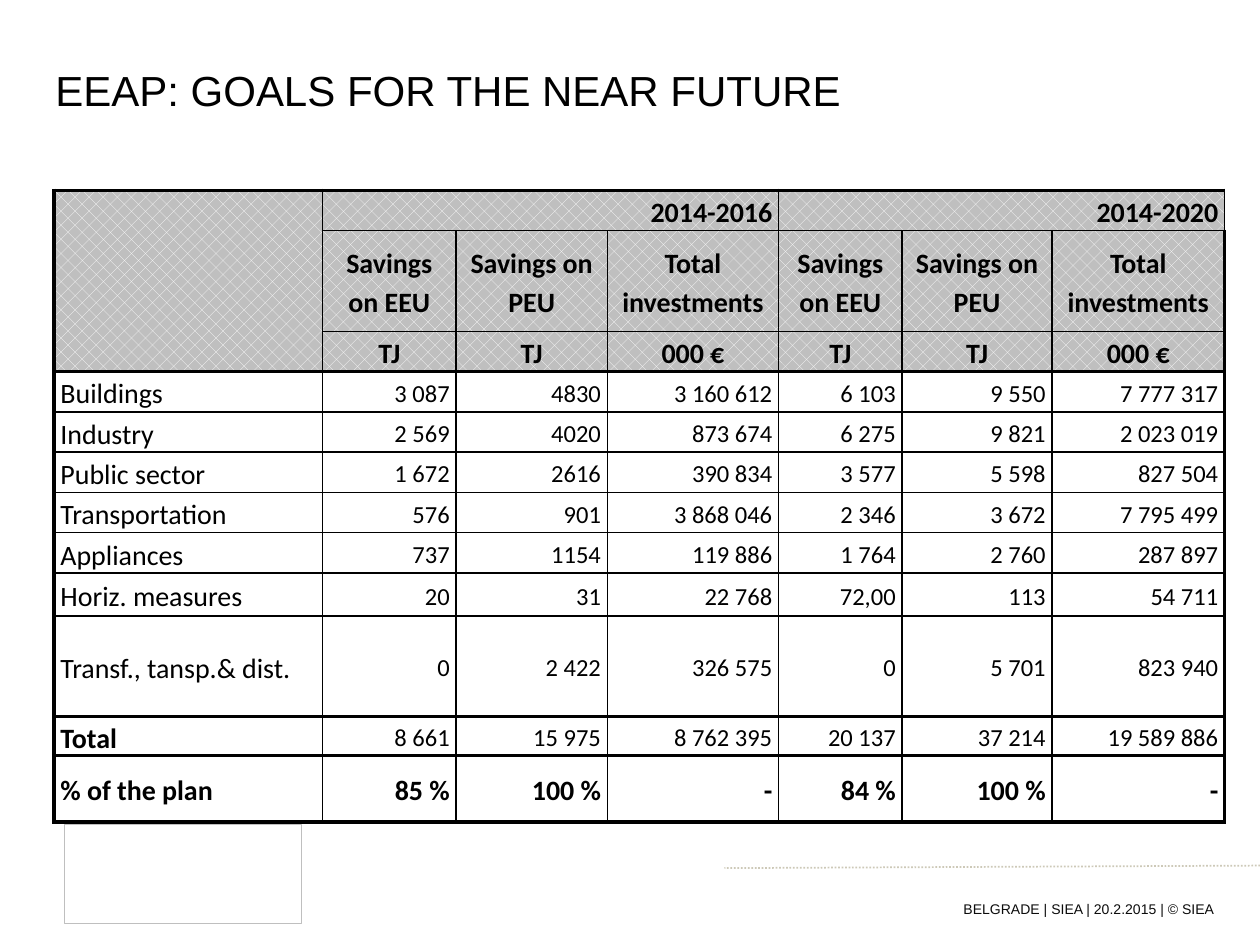
from dataclasses import dataclass

from lxml import etree
from pptx import Presentation
from pptx.dml.color import RGBColor
from pptx.enum.dml import MSO_LINE, MSO_PATTERN
from pptx.enum.shapes import MSO_CONNECTOR, MSO_SHAPE
from pptx.enum.text import MSO_ANCHOR, MSO_AUTO_SIZE, PP_ALIGN
from pptx.oxml.ns import qn
from pptx.util import Inches, Pt

LEFT, CENTER, RIGHT = PP_ALIGN.LEFT, PP_ALIGN.CENTER, PP_ALIGN.RIGHT
MIDDLE, TOP = MSO_ANCHOR.MIDDLE, MSO_ANCHOR.TOP
NO_AUTOFIT = MSO_AUTO_SIZE.NONE
STRAIGHT, RECTANGLE = MSO_CONNECTOR.STRAIGHT, MSO_SHAPE.RECTANGLE
DOTTED, HATCH = MSO_LINE.ROUND_DOT, MSO_PATTERN.PERCENT_25

# The slide is a grid of square units
GRID_COLUMNS, GRID_ROWS = 100, 75


@dataclass(frozen=True)
class Theme:
    heading_font: str = "Arial"
    table_font: str = "Calibri"
    ink: str = "000000"
    footer_ink: str = "0C0C0C"
    rule: str = "CDC9B8"
    gray: str = "BFBFBF"
    hatch: str = "FFFFFF"
    title_size: float = 24
    label_size: float = 16
    value_size: float = 14
    footer_size: float = 8
    thin: float = 1
    thick: float = 2.25
    hairline: float = 0.25
    line_spacing: float = 1.15


# Table content
PERIODS = ["2014-2016", "2014-2020"]
MEASURES = ["Savings on EEU", "Savings on PEU", "Total investments"]
UNITS = ["TJ", "TJ", "000 €"]
SECTORS = [
    ["Buildings", "3 087", "4830", "3 160 612", "6 103", "9 550", "7 777 317"],
    ["Industry", "2 569", "4020", "873 674", "6 275", "9 821", "2 023 019"],
    ["Public sector", "1 672", "2616", "390 834", "3 577", "5 598", "827 504"],
    ["Transportation", "576", "901", "3 868 046", "2 346", "3 672", "7 795 499"],
    ["Appliances", "737", "1154", "119 886", "1 764", "2 760", "287 897"],
    ["Horiz. measures", "20", "31", "22 768", "72,00", "113", "54 711"],
    ["Transf., tansp.& dist.", "0", "2 422", "326 575", "0", "5 701", "823 940"],
]
TOTAL = ["Total", "8 661", "15 975", "8 762 395", "20 137", "37 214", "19 589 886"]
PLAN_SHARE = ["% of the plan", "85 %", "100 %", "-", "84 %", "100 %", "-"]

PERIOD_ROW = [""] + [text for period in PERIODS for text in (period, "", "")]
HEADER = [PERIOD_ROW, [""] + MEASURES * 2, [""] + UNITS * 2]
GOALS = HEADER + SECTORS + [TOTAL, PLAN_SHARE]
HEADER_ROWS = len(HEADER)
PLAN_ROW = len(GOALS) - 1
TOTAL_ROW = PLAN_ROW - 1
THICK_BELOW = {HEADER_ROWS - 1, TOTAL_ROW - 1, TOTAL_ROW, PLAN_ROW}

# Table sizes in grid units
COLUMN_WIDTHS = [21.3, 10.6, 12, 13.6, 9.8, 11.9, 13.7]
ROW_HEIGHTS = [3.2, 8] + [3.2] * 6 + [3.4, 8, 2.9, 5.3]


class GoalsSlide:
    def __init__(self, presentation, theme):
        self.theme = theme
        self.unit_x = presentation.slide_width / GRID_COLUMNS
        self.unit_y = presentation.slide_height / GRID_ROWS
        self.slide = presentation.slides.add_slide(presentation.slide_layouts[5])
        self.shapes = self.slide.shapes

    def x(self, columns):
        return round(columns * self.unit_x)

    def y(self, rows):
        return round(rows * self.unit_y)

    def area(self, left, top, width, height):
        return self.x(left), self.y(top), self.x(width), self.y(height)

    def set_text(self, frame, text, font, size, color, align=LEFT, bold=False):
        frame.text = text
        paragraph = frame.paragraphs[0]
        paragraph.alignment = align
        for run in paragraph.runs:
            run.font.name = font
            run.font.size = Pt(size)
            run.font.bold = bold
            run.font.color.rgb = RGBColor.from_string(color)
        return paragraph

    def title(self, text, *area):
        heading = self.shapes.title
        heading.left, heading.top, heading.width, heading.height = self.area(*area)
        frame = heading.text_frame
        frame.auto_size = NO_AUTOFIT
        frame.vertical_anchor = MIDDLE
        self.set_text(frame, text, self.theme.heading_font, self.theme.title_size,
                      self.theme.ink)

    def footer(self, text, *area):
        frame = self.shapes.add_textbox(*self.area(*area)).text_frame
        frame.word_wrap = True
        frame.vertical_anchor = TOP
        frame.margin_left = frame.margin_right = frame.margin_top = frame.margin_bottom = 0
        self.set_text(frame, text, self.theme.heading_font, self.theme.footer_size,
                      self.theme.footer_ink, RIGHT)

    def dotted_rule(self, x1, y1, x2, y2):
        rule = self.shapes.add_connector(STRAIGHT, self.x(x1), self.y(y1), self.x(x2), self.y(y2))
        rule.line.color.rgb = RGBColor.from_string(self.theme.rule)
        rule.line.width = Pt(self.theme.thin)
        rule.line.dash_style = DOTTED
        etree.SubElement(rule._element.spPr, qn("a:effectLst"))

    def frame(self, *area):
        outline = self.shapes.add_shape(RECTANGLE, *self.area(*area))
        outline.shadow.inherit = False
        outline.fill.background()
        outline.line.color.rgb = RGBColor.from_string(self.theme.gray)
        outline.line.width = Pt(self.theme.hairline)

    def borders(self, cell, thick_sides):
        properties = cell._tc.get_or_add_tcPr()
        for side in "LRTB":
            width = self.theme.thick if side in thick_sides else self.theme.thin
            border = etree.SubElement(properties, qn(f"a:ln{side}"), w=str(Pt(width)))
            fill = etree.SubElement(border, qn("a:solidFill"))
            etree.SubElement(fill, qn("a:srgbClr"), val=self.theme.ink)

    def shade(self, cell, is_header):
        if not is_header:
            cell.fill.background()
            return
        cell.fill.patterned()
        cell.fill.pattern = HATCH
        cell.fill.fore_color.rgb = RGBColor.from_string(self.theme.hatch)
        cell.fill.back_color.rgb = RGBColor.from_string(self.theme.gray)

    def goal_cell(self, cell, text, row, column):
        is_header = row < HEADER_ROWS
        is_label = column == 0
        sides = {
            "L": is_label,
            "R": column == len(COLUMN_WIDTHS) - 1,
            "T": row == 0 or row - 1 in THICK_BELOW,
            "B": row in THICK_BELOW,
        }
        self.borders(cell, [side for side, thick in sides.items() if thick])
        self.shade(cell, is_header)
        cell.margin_left = cell.margin_right = Inches(0.05)
        cell.margin_top = cell.margin_bottom = 0
        cell.vertical_anchor = MIDDLE
        if not text:
            return
        bold = is_header or row == PLAN_ROW or (is_label and row == TOTAL_ROW)
        size = self.theme.label_size if bold or is_label else self.theme.value_size
        align = CENTER if 0 < row < HEADER_ROWS else LEFT if is_label else RIGHT
        paragraph = self.set_text(cell.text_frame, text, self.theme.table_font, size,
                                  self.theme.ink, align, bold)
        paragraph.line_spacing = self.theme.line_spacing

    def goals_table(self, left, top):
        area = self.area(left, top, sum(COLUMN_WIDTHS), sum(ROW_HEIGHTS))
        table = self.shapes.add_table(len(GOALS), len(COLUMN_WIDTHS), *area).table
        table.first_row = table.horz_banding = False
        for column, width in zip(table.columns, COLUMN_WIDTHS):
            column.width = self.x(width)
        for row, height in zip(table.rows, ROW_HEIGHTS):
            row.height = self.y(height)
        for r, texts in enumerate(GOALS):
            for c, text in enumerate(texts):
                self.goal_cell(table.cell(r, c), text, r, c)
        # Empty corner, then one heading over each period
        table.cell(0, 0).merge(table.cell(HEADER_ROWS - 1, 0))
        for period in range(len(PERIODS)):
            first = 1 + period * len(MEASURES)
            table.cell(0, first).merge(table.cell(0, first + len(MEASURES) - 1))


def main():
    presentation = Presentation()
    presentation.slide_width, presentation.slide_height = Inches(10), Inches(7.5)
    goals = GoalsSlide(presentation, Theme())

    # Footer
    goals.dotted_rule(100, 68.7, 57.5, 68.9)
    goals.footer("BELGRADE | SIEA | 20.2.2015 | © SIEA", 24, 71.5, 72.4, 3.5)
    goals.frame(5.1, 65.4, 18.8, 7.9)

    # Title and table
    goals.title("EEAP: GOALS FOR THE NEAR FUTURE", 3.4, 5.2, 92.7, 3.9)
    goals.goals_table(4.3, 15.1)

    presentation.save("out.pptx")


if __name__ == "__main__":
    main()
